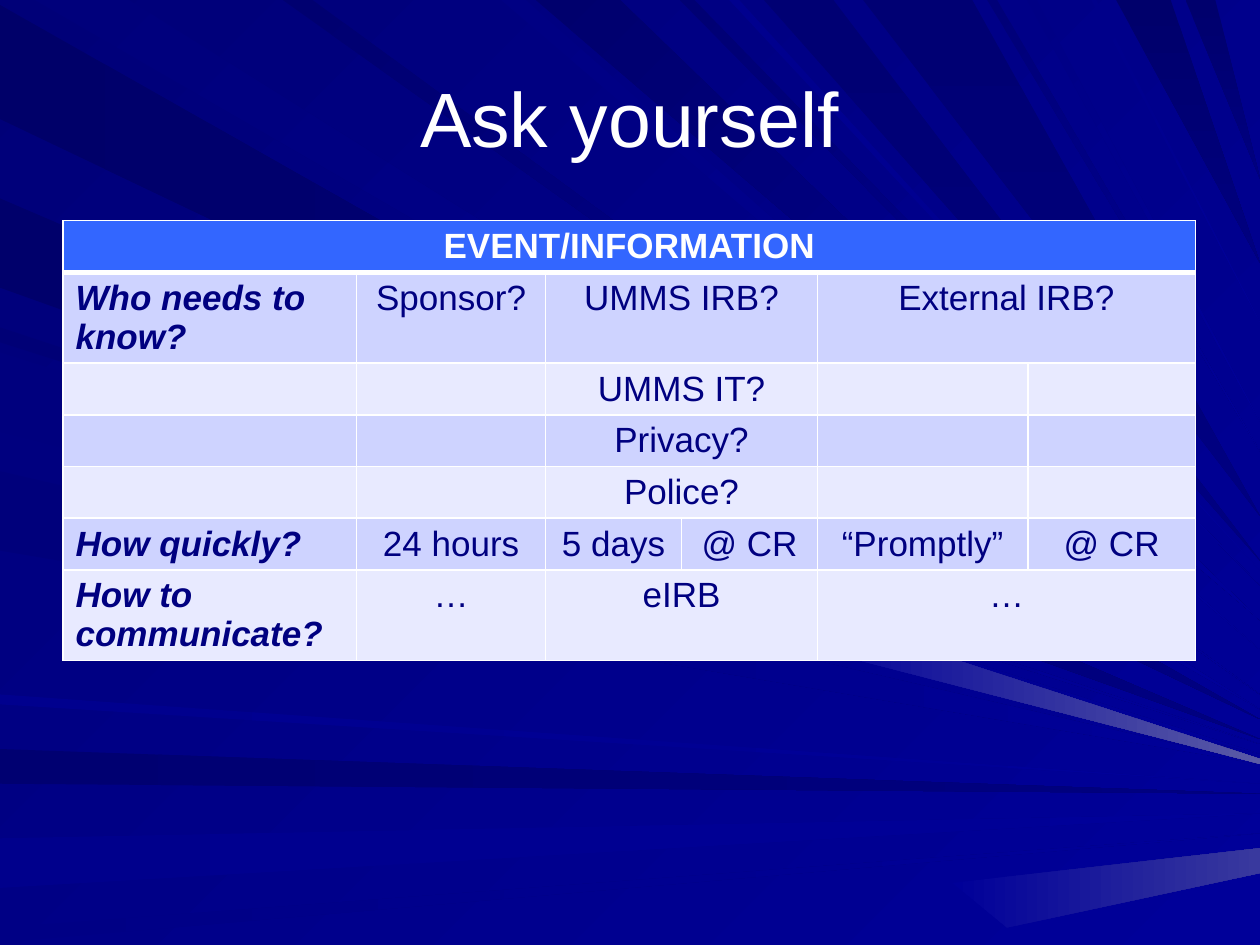
from lxml.etree import SubElement
from pptx import Presentation
from pptx.dml.color import RGBColor
from pptx.enum.text import MSO_ANCHOR, PP_ALIGN
from pptx.oxml.ns import qn
from pptx.util import Cm, Pt

FONT = "Arial"
WHITE, NAVY, BLUE, HEADER = "FFFFFF", "000080", "000099", "3366FF"
BANDS = ("CED3FF", "E8EAFF")
TITLE = "Ask yourself"

# Table content: None continues the cell to its left
ROWS = [
    ["EVENT/INFORMATION", None, None, None, None, None],
    ["Who needs to know?", "Sponsor?", "UMMS IRB?", None, "External IRB?", None],
    ["", "", "UMMS IT?", None, "", ""],
    ["", "", "Privacy?", None, "", ""],
    ["", "", "Police?", None, "", ""],
    ["How quickly?", "24 hours", "5 days", "@ CR", "“Promptly”", "@ CR"],
    ["How to communicate?", "…", "eIRB", None, "…", None],
]
COLUMN_WIDTHS = [5.92, 3.81, 2.74, 2.74, 4.24, 3.38]
ROW_HEIGHT = 1.04
PAGE_WIDTH, PAGE_HEIGHT = 25.4, 19.05

# Rays narrow to a tip on the right edge (cm): start of base, end of base,
# height of tip, dark colour, light colour
LEFT_RAYS = [
    (0.1, 2.4, 14.5, "000069", NAVY),
    (15.1, 15.8, 16, "000071", NAVY),
    (16.9, 17.9, 16.4, "00008C", BLUE),
    (18.7, 19, 16.8, "000085", BLUE),
    (6.6, 6.9, 15, "000076", BLUE),
    (4, 5.8, 14.9, "00006B", NAVY),
    (7.1, 8.7, 15.2, "00007E", BLUE),
    (9.5, 11.1, 15.4, "00007B", BLUE),
    (14, 14.2, 15.8, "00008E", BLUE),
]
TOP_RAYS = [
    (0.7, 2.6, 14.3, "00007B", BLUE),
    (10.1, 10.6, 13.1, "000083", BLUE),
    (10.8, 12.5, 12.5, "00006D", BLUE),
    (13.7, 14, 11.8, "000073", BLUE),
    (15.4, 16.8, 11.3, "000073", NAVY),
    (22.5, 23.6, 5.3, "00006B", NAVY),
    (23.9, 24.5, 3.6, "00006D", NAVY),
    (5.7, 6.3, 14, "000070", BLUE),
    (14.7, 14.9, 11.5, "00008E", BLUE),
    (17.4, 19.6, 10.4, "000073", NAVY),
    (19.9, 20.1, 9.1, "000078", BLUE),
    (20.7, 20.9, 8.5, "000085", BLUE),
    (22, 22.1, 6.5, "00008A", BLUE),
]
# Glows brighten toward the right edge: light colour, corners
GLOWS = [
    ("39399E", [(25.4, 17.6), (25.4, 17.1), (19.2, 17.8), (20.3, 18.7)]),
    ("5A5AA6", [(25.4, 15.3), (16.2, 12.3), (16.1, 13), (25.4, 15.4)]),
]


def color(value):
    return RGBColor.from_string(value)


def paint(fill, start, end=None, angle=0):
    """Fill with one colour, or with a gradient when an end is given."""
    if end is None:
        fill.solid()
        fill.fore_color.rgb = color(start)
        return
    fill.gradient()
    fill.gradient_angle = -angle % 360
    for stop, value in zip(fill.gradient_stops, (start, end)):
        stop.color.rgb = color(value)


def write(frame, text, size=20, ink=NAVY, bold=False, italic=False, align=PP_ALIGN.CENTER):
    para = frame.paragraphs[0]
    para.alignment = align
    span = para.add_run()
    span.text = text
    font = span.font
    font.name, font.size, font.bold, font.italic = FONT, Pt(size), bold, italic
    font.color.rgb = color(ink)


def add_ray(slide, corners, start, end, angle=0):
    points = [(Cm(x), Cm(y)) for x, y in corners]
    builder = slide.shapes.build_freeform(*points[0])
    builder.add_line_segments(points[1:], close=True)
    ray = builder.convert_to_shape()
    paint(ray.fill, start, end, angle)
    ray.line.fill.background()
    ray.shadow.inherit = False


def add_background(slide):
    paint(slide.background.fill, "000078", BLUE, 45)
    for first, last, tip, dark, light in LEFT_RAYS:
        add_ray(slide, [(0, first), (0, last), (PAGE_WIDTH, tip)], dark, light)
    for first, last, tip, dark, light in TOP_RAYS:
        add_ray(slide, [(first, 0), (last, 0), (PAGE_WIDTH, tip)], dark, light,
                angle=90 if light == NAVY else 45)
    for light, corners in GLOWS:
        add_ray(slide, corners, BLUE, light)


def add_borders(cell, **widths):
    properties = cell._tc.get_or_add_tcPr()
    for side in "LRTB":
        line = SubElement(properties, qn(f"a:ln{side}"), w=str(Pt(widths.get(side, 1))))
        SubElement(SubElement(line, qn("a:solidFill")), qn("a:srgbClr"), val=WHITE)


def add_event_table(slide):
    shape = slide.shapes.add_table(len(ROWS), len(COLUMN_WIDTHS), Cm(1.27), Cm(4.45),
                                   Cm(sum(COLUMN_WIDTHS)), Cm(ROW_HEIGHT * len(ROWS)))
    table = shape.table
    for column, width in zip(table.columns, COLUMN_WIDTHS):
        column.width = Cm(width)
    for r, texts in enumerate(ROWS):
        header = r == 0
        table.rows[r].height = Cm(ROW_HEIGHT)
        for c, text in enumerate(texts):
            cell = table.cell(r, c)
            add_borders(cell, **({"B": 3} if header else {"T": 3} if r == 1 else {}))
            paint(cell.fill, HEADER if header else BANDS[(r - 1) % 2])
            if text is None:
                continue
            last = c
            while last + 1 < len(texts) and texts[last + 1] is None:
                last += 1
            if last > c:
                cell.merge(table.cell(r, last))
            if text:
                label = c == 0 and not header
                write(cell.text_frame, text, ink=WHITE if header else NAVY,
                      bold=header or label, italic=label,
                      align=PP_ALIGN.LEFT if label else PP_ALIGN.CENTER)


def main():
    deck = Presentation()
    deck.slide_width, deck.slide_height = Cm(PAGE_WIDTH), Cm(PAGE_HEIGHT)
    slide = deck.slides.add_slide(deck.slide_layouts[5])
    add_background(slide)

    # Title, raised above the rays
    title = slide.shapes.title
    slide.shapes._spTree.append(title._element)
    title.left, title.top, title.width, title.height = Cm(1.27), Cm(0.76), Cm(22.86), Cm(3.18)
    title.text_frame.vertical_anchor = MSO_ANCHOR.MIDDLE
    write(title.text_frame, TITLE, size=44, ink=WHITE)

    # Table
    add_event_table(slide)
    deck.save("out.pptx")


if __name__ == "__main__":
    main()
